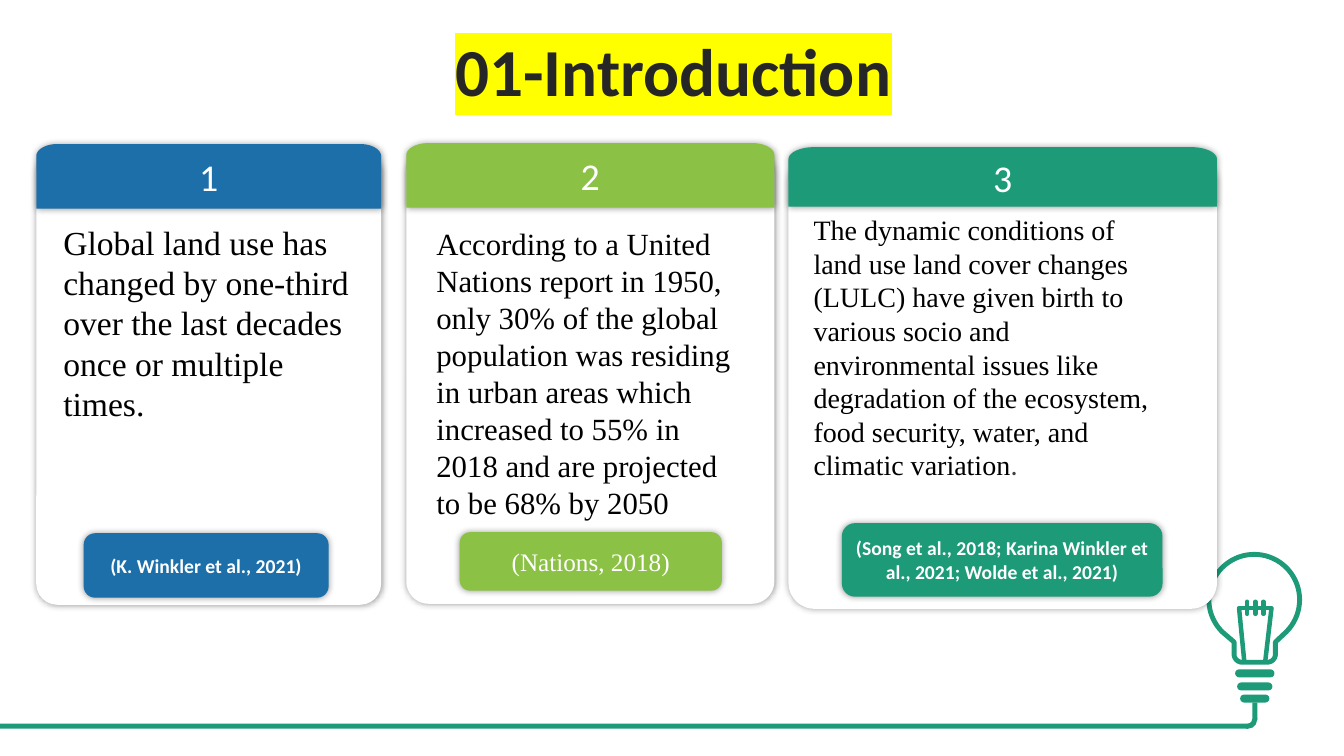
from dataclasses import dataclass
from math import cos, radians, sin

from lxml import etree
from pptx import Presentation
from pptx.dml.color import RGBColor
from pptx.enum import shapes as kinds, text as txt
from pptx.oxml import ns
from pptx.util import Inches, Pt

HUES = {
    "white": "FFFFFF", "black": "000000", "ink": "262626", "grey": "404040",
    "blue": "1D6FA9", "lime": "8BC145", "teal": "1D9A78", "yellow": "FFFF00",
}
SANS, SERIF = "Calibri", "Times New Roman"
SHAPE = kinds.MSO_SHAPE
Box = tuple[float, float, float, float]
Spot = tuple[float, float]


@dataclass
class Run:
    words: str
    size: float
    font: str = SANS
    hue: str = "white"
    bold: bool = False


@dataclass
class Card:
    hue: str
    panel: Box
    head: Box
    label: str
    badge: Box
    cite: Run
    place: Box
    body: list[Run]


CARDS = [
    Card("blue", (0.36, 1.51, 3.42, 4.49), (0.36, 1.43, 3.42, 0.64), "1",
         (0.83, 5.29, 2.43, 0.64), Run("(K. Winkler et al., 2021)", 14, bold=True),
         (0.53, 2.15, 3.14, 2.12),
         [Run("Global land use has changed by one-third over the last decades "
              "once or multiple times.", 24, SERIF, "black")]),
    Card("lime", (4.03, 1.5, 3.65, 4.49), (4.03, 1.42, 3.65, 0.64), "2",
         (4.56, 5.28, 2.6, 0.58), Run("(Nations, 2018)", 18, SERIF),
         (4.23, 2.18, 3.13, 3.06),
         [Run("According to a United Nations report in 1950, only 30% of the global "
              "population was residing in urban areas which increased to 55% in 2018 "
              "and are projected to be 68% by 2050", 22, SERIF, "black")]),
    Card("teal", (7.82, 1.55, 4.25, 4.49), (7.82, 1.46, 4.25, 0.59), "3",
         (8.35, 5.19, 3.18, 0.73),
         Run("(Song et al., 2018; Karina Winkler et al., 2021; Wolde et al., 2021)",
             14, bold=True),
         (7.97, 2.06, 3.65, 2.79),
         [Run("The dynamic conditions of land use land cover changes (LULC) have given "
              "birth to various socio and environmental issues like degradation of the "
              "ecosystem, food security, water, and climatic variation",
              20, SERIF, "black"),
          Run(".", 20, SANS, "grey")]),
]

deck = Presentation()
deck.slide_width, deck.slide_height = Inches(13.33), Inches(7.5)
slide = deck.slides.add_slide(deck.slide_layouts[6])


def tone(name: str) -> RGBColor:
    return RGBColor.from_string(HUES[name])


def paint(shape, hue: str, edge: float = 0):
    shape.shadow.inherit = False
    shape.fill.solid()
    shape.fill.fore_color.rgb = tone(hue)
    if edge:
        shape.line.color.rgb = tone("teal")
        shape.line.width = Pt(edge)
    else:
        shape.line.fill.background()
    return shape


def glow(shape) -> None:
    """Put a soft shadow all round the shape."""
    list_ = shape._element.spPr.find(ns.qn("a:effectLst"))
    outer = etree.SubElement(list_, ns.qn("a:outerShdw"), blurRad=str(Pt(5)),
                             dist="0", dir="0", algn="ctr", rotWithShape="0")
    hue = etree.SubElement(outer, ns.qn("a:srgbClr"), val=HUES["black"])
    etree.SubElement(hue, ns.qn("a:alpha"), val="40000")


def block(kind, box: Box, hue: str, *turns: float):
    shape = slide.shapes.add_shape(kind, *map(Inches, box))
    for i, turn in enumerate(turns):
        shape.adjustments[i] = turn
    return paint(shape, hue)


def arc(x: float, y: float, wide: float, high: float,
        start: int, end: int) -> list[Spot]:
    """Points on an ellipse, in degrees clockwise from the right."""
    return [(x + wide * cos(radians(a)), y + high * sin(radians(a)))
            for a in range(start, end + 1, 5)]


def trace(spots: list[Spot], hue: str, edge: float = 0):
    first, *rest = [(Inches(x), Inches(y)) for x, y in spots]
    pen = slide.shapes.build_freeform(*first)
    pen.add_line_segments(rest, close=True)
    return paint(pen.convert_to_shape(), hue, edge)


def stroke(start: Spot, end: Spot) -> None:
    line = slide.shapes.add_connector(
        kinds.MSO_CONNECTOR.STRAIGHT, *map(Inches, start + end))
    line.line.color.rgb = tone("teal")
    line.line.width = Pt(3.2)
    line.line._ln.set("cap", "rnd")
    etree.SubElement(line._element.spPr, ns.qn("a:effectLst"))


def write(shape, runs: list[Run], mid: bool = True):
    frame = shape.text_frame
    frame.word_wrap = True
    frame.vertical_anchor = txt.MSO_ANCHOR.MIDDLE if mid else txt.MSO_ANCHOR.TOP
    para = frame.paragraphs[0]
    para.alignment = txt.PP_ALIGN.CENTER if mid else txt.PP_ALIGN.LEFT
    for item in runs:
        run = para.add_run()
        run.text = item.words
        run.font.size, run.font.name = Pt(item.size), item.font
        run.font.bold = item.bold
        run.font.color.rgb = tone(item.hue)
    return para


def textbox(box: Box):
    return slide.shapes.add_textbox(*map(Inches, box))


def draw_bulb() -> None:
    glass = (arc(12.44, 5.95, 0.45, 0.45, 135, 405) + [(12.65, 6.37)]
             + arc(12.57, 6.49, 0.08, 0.08, 0, 90)
             + arc(12.32, 6.49, 0.08, 0.08, 90, 180) + [(12.24, 6.37)])
    trace(glass, "white", 3.5)
    for y, wide in ((6.64, 0.39), (6.77, 0.35), (6.89, 0.29)):
        block(SHAPE.ROUNDED_RECTANGLE, (12.445 - wide / 2, y, wide, 0.08), "teal", 0.5)
    stroke((12.29, 6.03), (12.61, 6.03))
    stroke((12.29, 6.04), (12.34, 6.55))
    stroke((12.61, 6.04), (12.55, 6.55))
    for x in (12.37, 12.45, 12.53):
        stroke((x, 5.97), (x, 6.09))
    block(SHAPE.RECTANGLE, (0, 7.18, 12.37, 0.05), "teal")
    block(SHAPE.RECTANGLE, (12.42, 6.97, 0.05, 0.17), "teal")
    block(SHAPE.BLOCK_ARC, (12.28, 7.04, 0.19, 0.19), "teal", 213.394, 60.915, 0.271)


def draw_title() -> None:
    para = write(textbox((0.35, 0.37, 12.66, 0.79)),
                 [Run("01-Introduction", 48, hue="ink", bold=True)])
    para.line_spacing, para.space_before = 0.8, Pt(10)
    mark = etree.Element(ns.qn("a:highlight"))
    etree.SubElement(mark, ns.qn("a:srgbClr"), val=HUES["yellow"])
    para.runs[0].font._element.find(ns.qn("a:solidFill")).addnext(mark)


def draw_card(card: Card) -> None:
    glow(block(SHAPE.ROUNDED_RECTANGLE, card.panel, "white", 0.061))
    x, y, wide, high = card.head
    rx, ry = 0.06 * wide, 0.12
    head = trace(arc(x + rx, y + ry, rx, ry, 180, 270)
                 + arc(x + wide - rx, y + ry, rx, ry, 270, 360)
                 + [(x + wide, y + high), (x, y + high)], card.hue)
    glow(head)
    write(head, [Run(card.label, 27)])
    badge = block(SHAPE.ROUNDED_RECTANGLE, card.badge, card.hue, 0.178)
    glow(badge)
    write(badge, [card.cite])
    write(textbox(card.place), card.body, mid=False)


draw_bulb()
draw_title()
for card in CARDS:
    draw_card(card)
deck.save("out.pptx")
